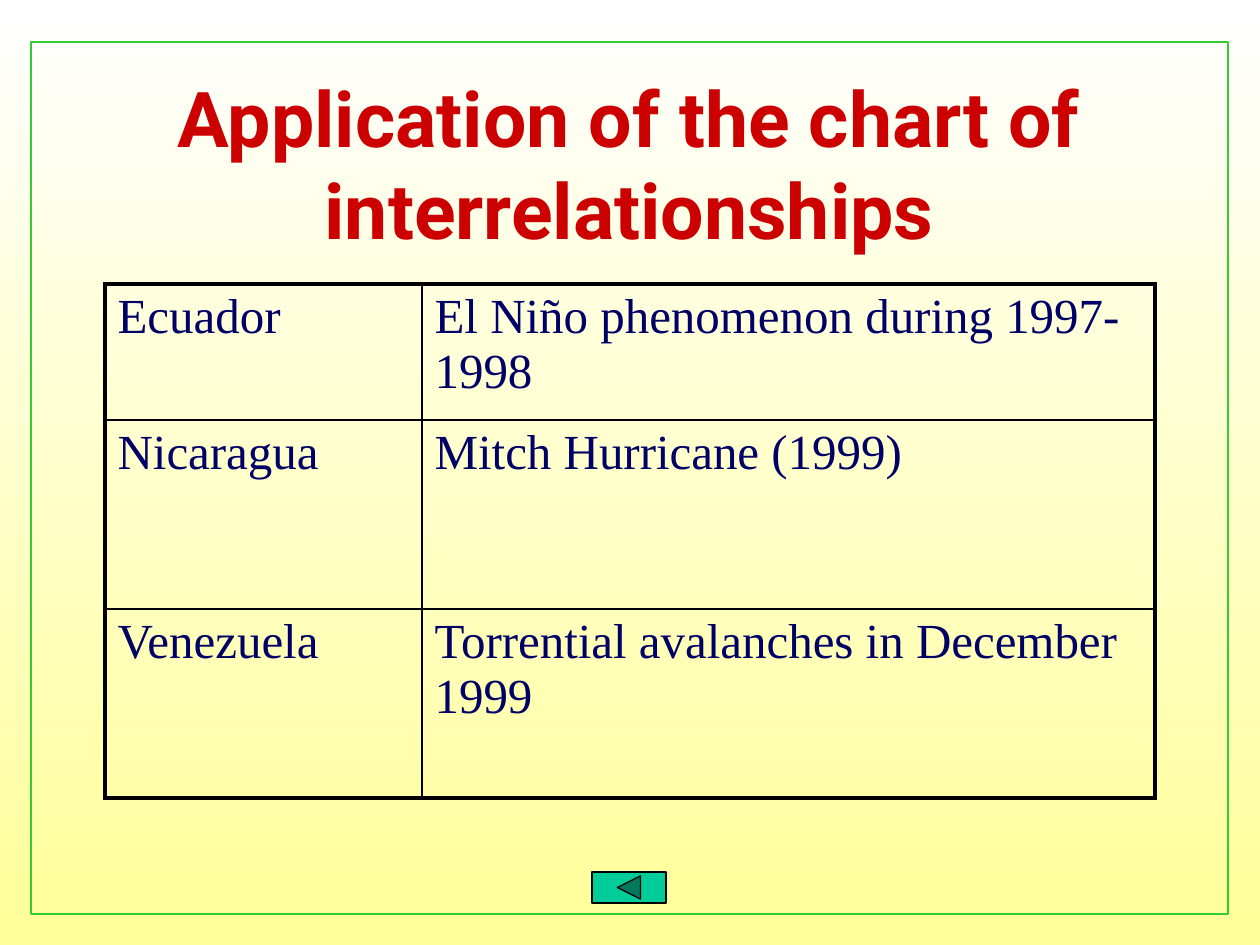
from lxml import etree
from pptx import Presentation
from pptx.dml.color import RGBColor
from pptx.enum.shapes import MSO_SHAPE
from pptx.enum.text import MSO_ANCHOR, PP_ALIGN
from pptx.oxml.ns import qn
from pptx.util import Emu, Pt

RECT = MSO_SHAPE.RECTANGLE
BACK_BUTTON = MSO_SHAPE.ACTION_BUTTON_BACK_OR_PREVIOUS
MIDDLE, CENTER = MSO_ANCHOR.MIDDLE, PP_ALIGN.CENTER

WHITE = RGBColor(0xFF, 0xFF, 0xFF)
YELLOW = RGBColor(0xFF, 0xFF, 0x99)
GREEN = RGBColor(0x33, 0xCC, 0x33)
TEAL = RGBColor(0x00, 0xCC, 0x99)
RED = RGBColor(0xCC, 0x00, 0x00)
NAVY = RGBColor(0x00, 0x00, 0x66)
BLACK = RGBColor(0x00, 0x00, 0x00)

TITLE_FONT = {"name": "Roboto", "size": Pt(44), "bold": True}
CELL_FONT = {"name": "Times New Roman", "size": Pt(28), "bold": False}
OUTER, INNER = Pt(2.25), Pt(1)

COL_WIDTHS = [317, 733]
ROW_HEIGHTS = [136, 189, 189]
EVENTS = [
    ("Ecuador", "El Niño phenomenon during 1997-1998"),
    ("Nicaragua", "Mitch Hurricane (1999)"),
    ("Venezuela", "Torrential avalanches in December 1999"),
]


def px(n):
    return Emu(round(n * 914400 / 126))


def write(tf, text, fmt, color):
    p = tf.paragraphs[0]
    r = p.add_run()
    r.text = text
    for key, value in fmt.items():
        setattr(r.font, key, value)
    r.font.color.rgb = color
    return p


def add_background(s):
    fill = s.background.fill
    fill.gradient()
    fill.gradient_angle = 270
    for stop, color, position in zip(fill.gradient_stops, (WHITE, YELLOW), (0, 1)):
        stop.color.rgb = color
        stop.position = position


def add_box(s, kind, x, y, w, h, line, width, fill=None):
    sp = s.shapes.add_shape(kind, px(x), px(y), px(w), px(h))
    sp.shadow.inherit = False
    if fill is None:
        sp.fill.background()
    else:
        sp.fill.solid()
        sp.fill.fore_color.rgb = fill
    sp.line.color.rgb = line
    sp.line.width = Pt(width)


def add_title(s, text, x, y, w, h):
    tf = s.shapes.add_textbox(px(x), px(y), px(w), px(h)).text_frame
    tf.word_wrap = True
    tf.vertical_anchor = MIDDLE
    write(tf, text, TITLE_FONT, RED).alignment = CENTER


def set_borders(cell, widths):
    tcPr = cell._tc.get_or_add_tcPr()
    for side, width in widths.items():
        ln = etree.SubElement(tcPr, qn(f"a:ln{side}"), w=str(int(width)))
        fill = etree.SubElement(ln, qn("a:solidFill"))
        etree.SubElement(fill, qn("a:srgbClr"), val=str(BLACK))


def add_table(s, rows, x, y):
    n_rows, n_cols = len(rows), len(COL_WIDTHS)
    frame = s.shapes.add_table(n_rows, n_cols, px(x), px(y),
                               px(sum(COL_WIDTHS)), px(sum(ROW_HEIGHTS)))
    table = frame.table
    table.first_row = table.horz_banding = False
    for col, width in zip(table.columns, COL_WIDTHS):
        col.width = px(width)
    for row, height in zip(table.rows, ROW_HEIGHTS):
        row.height = px(height)
    for i, row in enumerate(rows):
        for j, text in enumerate(row):
            cell = table.cell(i, j)
            # Thick lines on the outside, thin ones between cells
            set_borders(cell, {
                "L": OUTER if j == 0 else INNER,
                "R": OUTER if j == n_cols - 1 else INNER,
                "T": OUTER if i == 0 else INNER,
                "B": OUTER if i == n_rows - 1 else INNER,
            })
            cell.fill.background()
            write(cell.text_frame, text, CELL_FONT, NAVY)


def main():
    prs = Presentation()
    prs.slide_width, prs.slide_height = px(1260), px(945)
    s = prs.slides.add_slide(prs.slide_layouts[6])

    # Background and frame
    add_background(s)
    add_box(s, RECT, 31, 42, 1197, 872, GREEN, 1.5)

    # Title and table of events
    add_title(s, "Application of the chart of interrelationships", 94, 84, 1071, 158)
    add_table(s, EVENTS, 105, 284)

    # Back button
    add_box(s, BACK_BUTTON, 592, 872, 74, 31, BLACK, 0.75, TEAL)

    prs.save("out.pptx")


if __name__ == "__main__":
    main()
